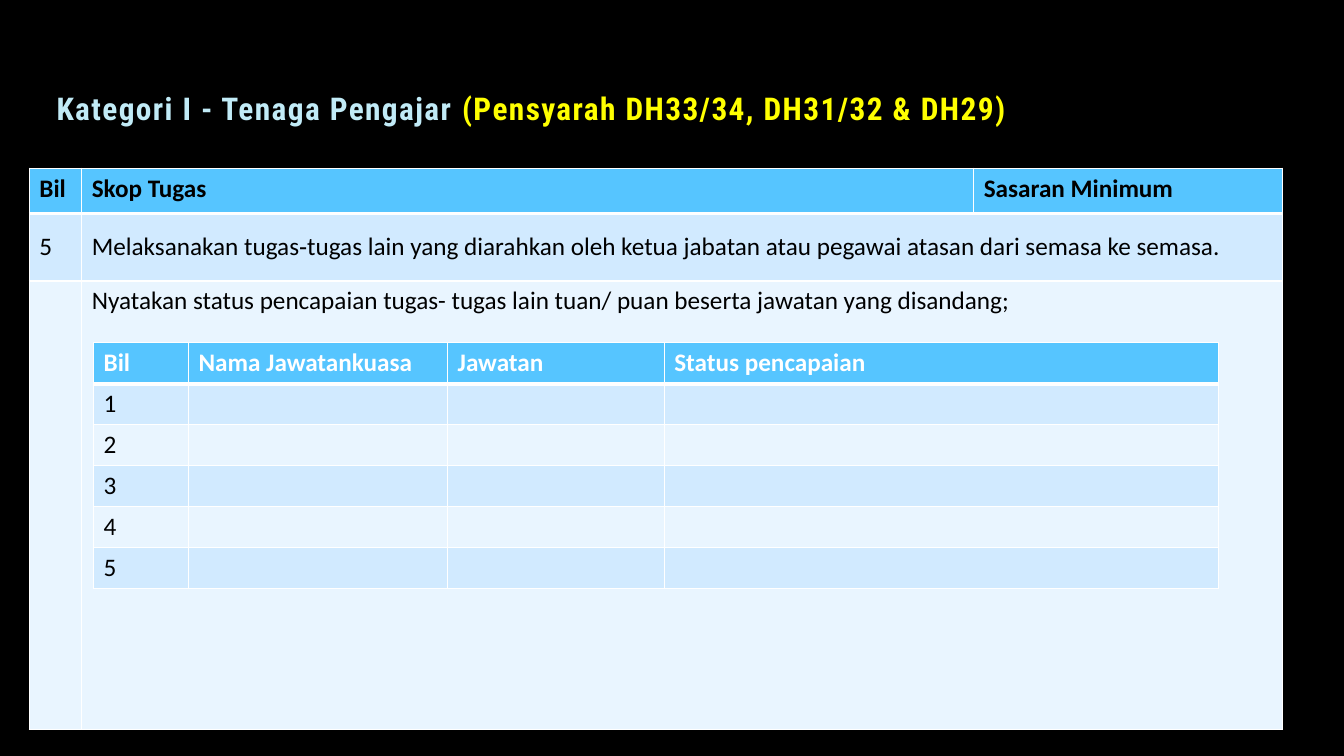
from lxml.etree import SubElement
from pptx import Presentation
from pptx.dml.color import RGBColor
from pptx.enum.text import MSO_ANCHOR as Anchor, MSO_AUTO_SIZE as AutoSize, PP_ALIGN as Align
from pptx.oxml.ns import qn
from pptx.util import Cm, Pt

BLACK = RGBColor(0x00, 0x00, 0x00)
WHITE = RGBColor(0xFF, 0xFF, 0xFF)
YELLOW = RGBColor(0xFF, 0xFF, 0x00)
PALE_CYAN = RGBColor(0xC1, 0xEB, 0xF7)
HEADER_BLUE = RGBColor(0x56, 0xC5, 0xFF)
BAND_DARK = RGBColor(0xD1, 0xEA, 0xFF)
BAND_LIGHT = RGBColor(0xE9, 0xF5, 0xFF)

DUTIES = [
    ["Bil", "Skop Tugas", "Sasaran Minimum"],
    ["5", "Melaksanakan tugas‐tugas lain yang diarahkan oleh ketua jabatan "
          "atau pegawai atasan dari semasa ke semasa.", ""],
    ["", "Nyatakan status pencapaian tugas- tugas lain tuan/ puan beserta "
         "jawatan yang disandang;", ""],
]
COMMITTEES = [["Bil", "Nama Jawatankuasa", "Jawatan", "Status pencapaian"]]
COMMITTEES += [[str(number), "", "", ""] for number in range(1, 6)]


def add_title(slide):
    title = slide.shapes.title
    title.left, title.top, title.width, title.height = Cm(1.17), Cm(1.6), Cm(28.88), Cm(1.7)
    frame = title.text_frame
    frame.auto_size = AutoSize.NONE
    frame.word_wrap = True
    frame.vertical_anchor = Anchor.BOTTOM
    heading = frame.paragraphs[0]
    heading.alignment = Align.LEFT
    heading.line_spacing = 0.7
    for words, color in [("Kategori I - Tenaga Pengajar ", PALE_CYAN),
                         ("(Pensyarah DH33/34, DH31/32 & DH29)", YELLOW)]:
        run = heading.add_run()
        run.text = words
        run.font.name = "Roboto Condensed"
        run.font.size = Pt(22.4)
        run.font.bold = True
        run.font.color.rgb = color
        run.font._element.set("spc", "100")


def set_borders(cell, top, bottom):
    properties = cell._tc.get_or_add_tcPr()
    for side, points in [("L", 1), ("R", 1), ("T", top), ("B", bottom)]:
        line = SubElement(properties, qn(f"a:ln{side}"), w=str(Pt(points)))
        fill = SubElement(line, qn("a:solidFill"))
        SubElement(fill, qn("a:srgbClr"), val=str(WHITE))


def style_cell(cell, row_index, header_color):
    is_header = row_index == 0
    set_borders(cell, 3 if row_index == 1 else 1, 3 if is_header else 1)
    cell.fill.solid()
    if is_header:
        cell.fill.fore_color.rgb = HEADER_BLUE
    else:
        cell.fill.fore_color.rgb = BAND_DARK if row_index % 2 else BAND_LIGHT
    font = cell.text_frame.paragraphs[0].font
    font.size = Pt(18)
    for run in cell.text_frame.paragraphs[0].runs:
        run.font.name = "Calibri"
        run.font.size = Pt(18)
        run.font.bold = is_header
        run.font.color.rgb = header_color if is_header else BLACK


def add_grid(slide, left, top, widths, heights, rows, header_color):
    grid = slide.shapes.add_table(len(rows), len(widths), Cm(left), Cm(top),
                                  Cm(sum(widths)), Cm(sum(heights))).table
    for column, width in zip(grid.columns, widths):
        column.width = Cm(width)
    for row, height in zip(grid.rows, heights):
        row.height = Cm(height)
    for row_index, texts in enumerate(rows):
        for column_index, words in enumerate(texts):
            cell = grid.cell(row_index, column_index)
            cell.text_frame.text = words
            style_cell(cell, row_index, header_color)
    return grid


def main():
    deck = Presentation()
    deck.slide_width, deck.slide_height = Cm(33.87), Cm(19.05)
    slide = deck.slides.add_slide(deck.slide_layouts[5])
    slide.background.fill.solid()
    slide.background.fill.fore_color.rgb = BLACK
    add_title(slide)

    duties = add_grid(slide, 0.74, 4.24, [1.32, 22.48, 7.77], [1.14, 1.7, 11.3],
                      DUTIES, BLACK)
    for row_index in (1, 2):
        duties.cell(row_index, 1).merge(duties.cell(row_index, 2))
    for column_index in (0, 1):
        duties.cell(1, column_index).vertical_anchor = Anchor.MIDDLE

    add_grid(slide, 2.36, 8.64, [2.39, 6.53, 5.46, 13.97], [1.03] * len(COMMITTEES),
             COMMITTEES, WHITE)
    deck.save("out.pptx")


if __name__ == "__main__":
    main()
